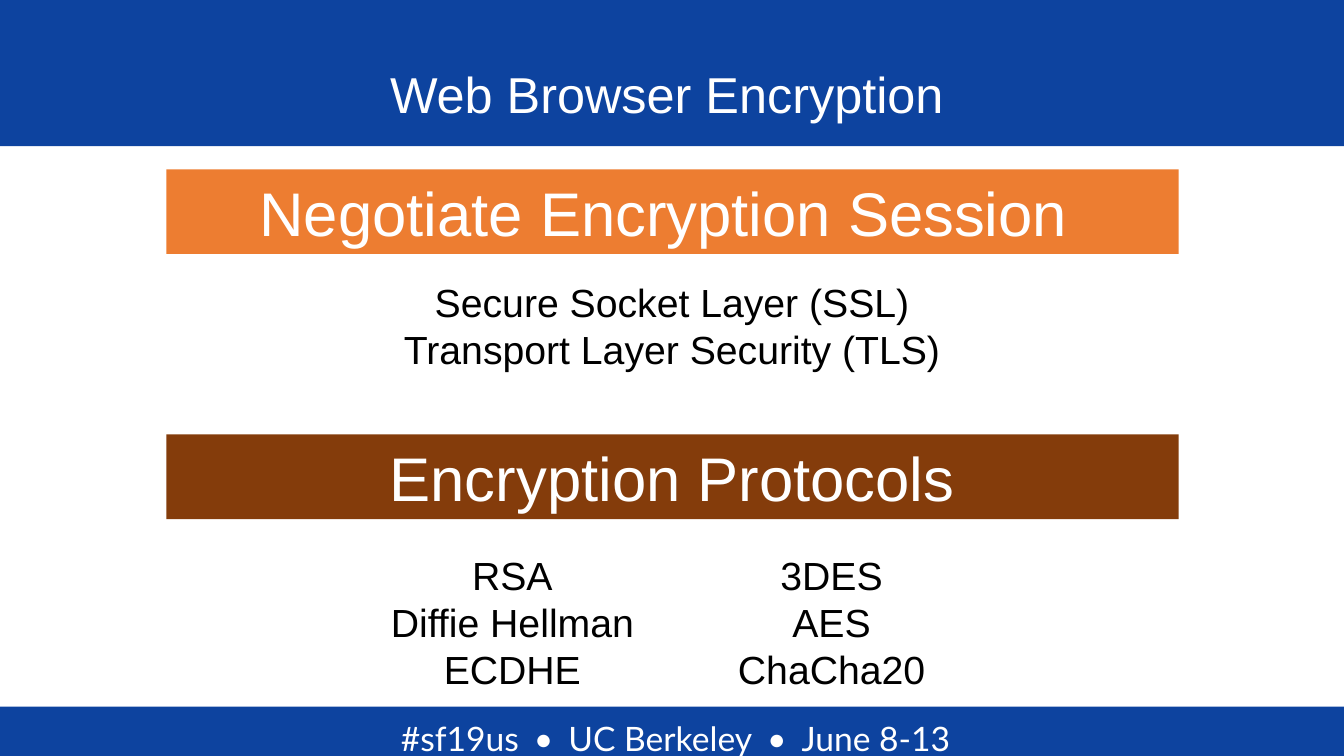
from dataclasses import dataclass

from pptx import Presentation
from pptx.dml.color import RGBColor
from pptx.enum import shapes, text
from pptx.util import Inches, Pt


@dataclass(frozen=True)
class Theme:
    blue: str = "0D439F"
    orange: str = "ED7D31"
    brown: str = "843C0B"
    white: str = "FFFFFF"
    black: str = "000000"
    font: str = "Arial"
    footer_font: str = "Lato"
    title_size: int = 36
    heading_size: int = 44
    body_size: int = 28
    footer_size: int = 24
    footer_gap: float = 4.6


@dataclass(frozen=True)
class Box:
    left: float
    top: float
    width: float
    height: float

    def lengths(self) -> list:
        return [Inches(v) for v in (self.left, self.top, self.width, self.height)]


@dataclass(frozen=True)
class Section:
    """A coloured heading bar with a centred list below it."""
    heading: str
    color: str
    top: float
    items: tuple[str, ...]
    list_height: float
    columns: int = 1


THEME = Theme()
BAR_LEFT, BAR_WIDTH, BAR_HEIGHT = 1.65, 10.04, 0.84
LIST_LEFT, LIST_WIDTH = 3.4, 6.53
BANDS = (Box(0, 0, 13.33, 1.45), Box(0, 7.01, 13.33, 0.49))
FOOTER = ("#sf19us", "UC Berkeley", "June 8-13")
SECTIONS = (
    Section("Negotiate Encryption Session ", THEME.orange, 1.68,
            ("Secure Socket Layer (SSL)", "Transport Layer Security (TLS)"), 1.04),
    Section("Encryption Protocols", THEME.brown, 4.31,
            ("RSA", "Diffie Hellman", "ECDHE", "3DES", "AES", "ChaCha20"), 1.51, 2),
)


def style(p, size: int, color: str, font: str = THEME.font) -> None:
    p.alignment = text.PP_ALIGN.CENTER
    p.font.size = Pt(size)
    p.font.name = font
    p.font.color.rgb = RGBColor.from_string(color)


def add_rect(slide, box: Box, color: str):
    sp = slide.shapes.add_shape(shapes.MSO_SHAPE.RECTANGLE, *box.lengths())
    sp.shadow.inherit = False
    sp.fill.solid()
    sp.fill.fore_color.rgb = RGBColor.from_string(color)
    sp.line.fill.background()
    return sp


def add_text_box(slide, box: Box):
    tf = slide.shapes.add_textbox(*box.lengths()).text_frame
    tf.word_wrap = True
    return tf


def add_section(slide, section: Section) -> None:
    bar = add_rect(slide, Box(BAR_LEFT, section.top, BAR_WIDTH, BAR_HEIGHT), section.color)
    tf = bar.text_frame
    tf.auto_size = text.MSO_AUTO_SIZE.SHAPE_TO_FIT_TEXT
    tf.text = section.heading
    style(tf.paragraphs[0], THEME.heading_size, THEME.white)

    list_top = section.top + BAR_HEIGHT + (0.19 if section.columns == 1 else 0.27)
    tf = add_text_box(slide, Box(LIST_LEFT, list_top, LIST_WIDTH, section.list_height))
    tf.auto_size = text.MSO_AUTO_SIZE.SHAPE_TO_FIT_TEXT
    if section.columns > 1:
        tf._txBody.bodyPr.set("numCol", str(section.columns))
    tf.text = "\n".join(section.items)
    for p in tf.paragraphs:
        style(p, THEME.body_size, THEME.black)


def add_footer(slide) -> None:
    """Join the footer parts with bullets set off by widened spaces."""
    tf = add_text_box(slide, Box(0.67, 7.05, 12.06, 0.52))
    tf.margin_left = tf.margin_right = Inches(0.13)
    tf.margin_top = tf.margin_bottom = Inches(0.07)
    p = tf.paragraphs[0]
    style(p, THEME.footer_size, THEME.white, THEME.footer_font)
    for i, part in enumerate(FOOTER):
        for piece in (" ", "•", " ", part) if i else (part,):
            r = p.add_run()
            r.text = piece
            if piece == " ":
                r.font._element.set("spc", str(round(THEME.footer_gap * 100)))


def set_title(slide, title: str) -> None:
    sp = slide.shapes.title
    sp.left, sp.top, sp.width, sp.height = Box(0.77, 0.64, 11.79, 0.48).lengths()
    tf = sp.text_frame
    tf.text = title
    tf.margin_left = 0
    tf.vertical_anchor = text.MSO_ANCHOR.TOP
    tf.auto_size = text.MSO_AUTO_SIZE.NONE
    p = tf.paragraphs[0]
    p.line_spacing = 0.9
    style(p, THEME.title_size, THEME.white)


def main() -> None:
    prs = Presentation()
    prs.slide_width, prs.slide_height = Inches(13.33), Inches(7.5)
    slide = prs.slides.add_slide(prs.slide_layouts.get_by_name("Title Only"))
    for band in BANDS:
        sp = add_rect(slide, band, THEME.blue)
        # Bands belong behind the title placeholder.
        slide.shapes.title._element.addprevious(sp._element)
    add_footer(slide)
    set_title(slide, "Web Browser Encryption")
    for section in SECTIONS:
        add_section(slide, section)
    prs.save("out.pptx")


if __name__ == "__main__":
    main()
